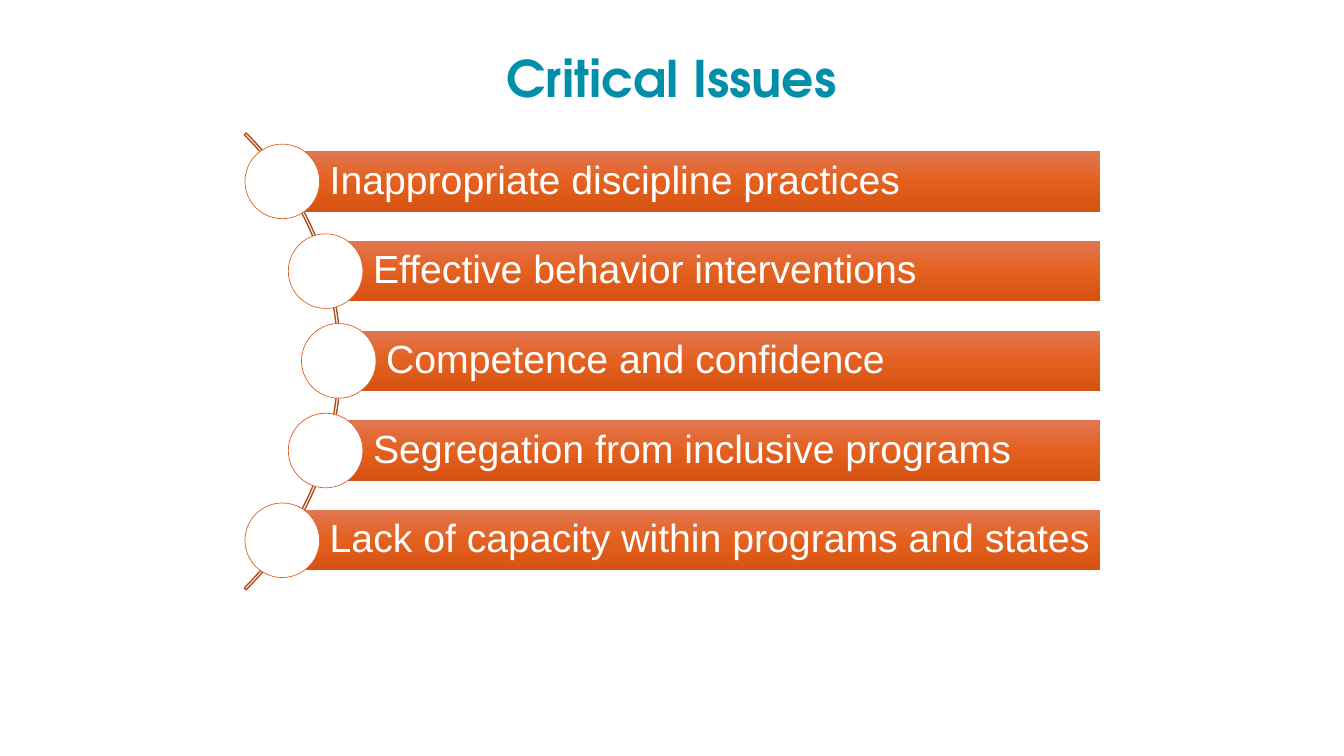
from copy import deepcopy

from pptx import Presentation
from pptx.dml.color import RGBColor
from pptx.enum.shapes import MSO_SHAPE
from pptx.enum.text import MSO_ANCHOR, MSO_AUTO_SIZE, PP_ALIGN
from pptx.oxml.ns import qn
from pptx.util import Inches, Pt

COLORS = {
    "title": "008EA9",
    "arc": "AF4F1F",
    "ring": "DB6327",
    "white": "FFFFFF",
    "bar_top": "E17752",
    "bar_middle": "E4601E",
    "bar_bottom": "D55211",
}

ISSUES = [
    ("Inappropriate discipline practices", 2.8),
    ("Effective behavior interventions", 3.23),
    ("Competence and confidence", 3.36),
    ("Segregation from inclusive programs", 3.23),
    ("Lack of capacity within programs and states", 2.8),
]
BAR_RIGHT = 10.91
BAR_HEIGHT = 0.6
CIRCLE_SIZE = 0.74
FIRST_CENTER = 1.8
PITCH = 0.89


class SlideBuilder:
    title_font = "TeX Gyre Adventor"
    body_font = "Arial"

    def __init__(self, s):
        self.s = s

    def color(self, name):
        return RGBColor.from_string(COLORS[name])

    def shape(self, kind, x, y, w, h, line=None, width=1):
        sp = self.s.shapes.add_shape(kind, Inches(x), Inches(y), Inches(w), Inches(h))
        sp.shadow.inherit = False
        if line:
            sp.line.color.rgb = self.color(line)
            sp.line.width = Pt(width)
        else:
            sp.line.fill.background()
        return sp

    def text(self, tf, text, font, size, color, align, bold=False):
        tf.word_wrap = True
        tf.auto_size = MSO_AUTO_SIZE.NONE
        tf.vertical_anchor = MSO_ANCHOR.MIDDLE
        p = tf.paragraphs[0]
        p.text = text
        p.alignment = align
        p.line_spacing = 0.9
        p.font.name = font
        p.font.size = Pt(size)
        p.font.bold = bold
        p.font.color.rgb = self.color(color)

    def title(self, text, x, y, w, h):
        sp = self.s.shapes.title
        sp.left, sp.top, sp.width, sp.height = map(Inches, (x, y, w, h))
        self.text(sp.text_frame, text, self.title_font, 36, "title", PP_ALIGN.CENTER, True)

    def arc(self, x, y, size):
        sp = self.shape(MSO_SHAPE.BLOCK_ARC, x, y, size, size, "arc")
        sp.fill.background()
        for i, value in enumerate((189, 27, 0.004)):
            sp.adjustments[i] = value

    def gradient(self, sp, names):
        sp.fill.gradient()
        sp.fill.gradient_angle = 270
        stops = sp._element.spPr.find(qn("a:gradFill")).find(qn("a:gsLst"))
        stops.insert(1, deepcopy(stops[0]))
        for i, (stop, name) in enumerate(zip(sp.fill.gradient_stops, names)):
            stop.position = i / 2
            stop.color.rgb = self.color(name)

    def bar(self, text, x, center):
        sp = self.shape(MSO_SHAPE.RECTANGLE, x, center - BAR_HEIGHT / 2, BAR_RIGHT - x, BAR_HEIGHT)
        self.gradient(sp, ("bar_top", "bar_middle", "bar_bottom"))
        tf = sp.text_frame
        tf.margin_left = Inches(0.47)
        tf.margin_top = tf.margin_right = tf.margin_bottom = Inches(0.08)
        self.text(tf, text, self.body_font, 28, "white", PP_ALIGN.LEFT)

    def circle(self, x, y):
        radius = CIRCLE_SIZE / 2
        sp = self.shape(MSO_SHAPE.OVAL, x - radius, y - radius, CIRCLE_SIZE, CIRCLE_SIZE, "ring", 0.5)
        sp.fill.solid()
        sp.fill.fore_color.rgb = self.color("white")


def main():
    prs = Presentation()
    prs.slide_width = Inches(13.33)
    prs.slide_height = Inches(7.5)
    builder = SlideBuilder(prs.slides.add_slide(prs.slide_layouts[5]))
    builder.title("Critical Issues", 2.35, 0.4, 8.62, 0.81)
    builder.arc(-3.03, 0.38, 6.41)
    for i, (issue, x) in enumerate(ISSUES):
        center = FIRST_CENTER + i * PITCH
        builder.bar(issue, x, center)
        builder.circle(x, center)
    prs.save("out.pptx")


if __name__ == "__main__":
    main()
